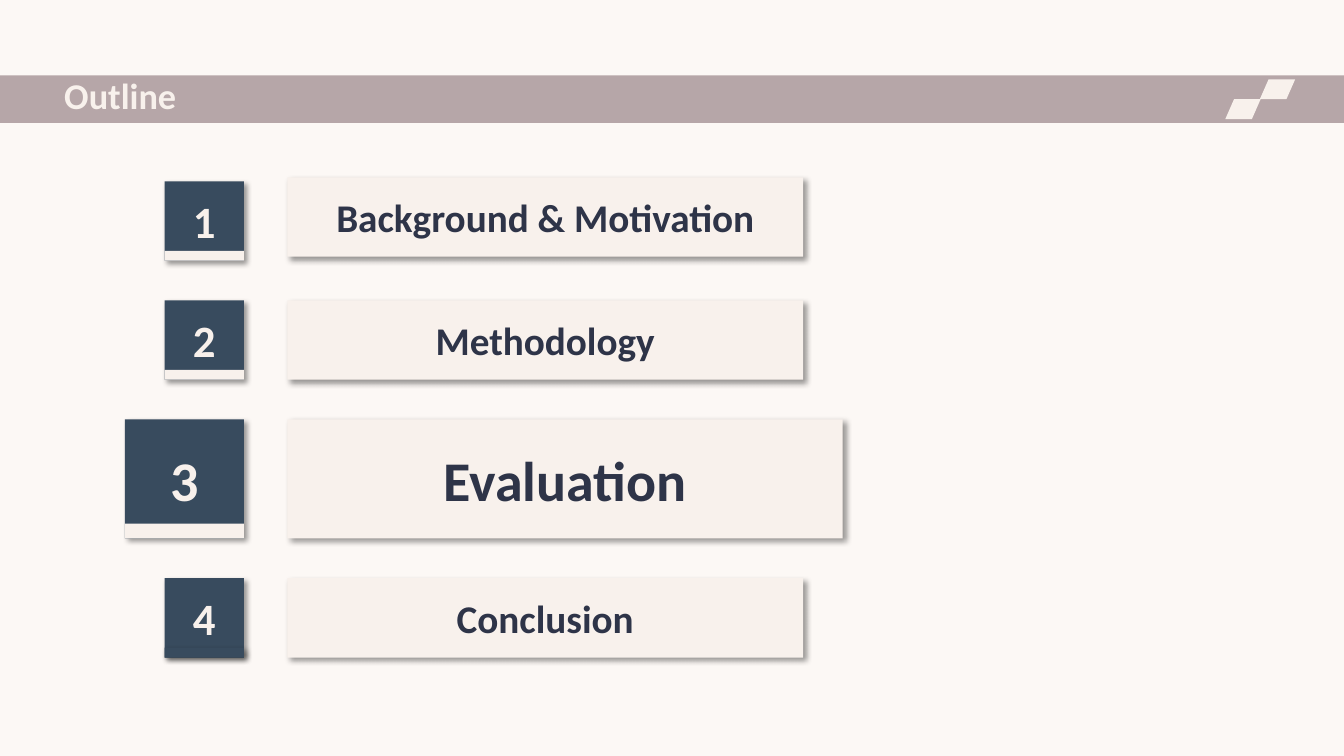
from lxml import etree
from pptx import Presentation
from pptx.dml.color import RGBColor
from pptx.enum.shapes import MSO_SHAPE
from pptx.enum.text import MSO_ANCHOR, PP_ALIGN
from pptx.oxml.ns import qn
from pptx.util import Cm, Pt

RECTANGLE = MSO_SHAPE.RECTANGLE
PARALLELOGRAM = MSO_SHAPE.PARALLELOGRAM
MIDDLE = MSO_ANCHOR.MIDDLE
CENTER, LEFT = PP_ALIGN.CENTER, PP_ALIGN.LEFT

FONT = "Calibri"
COLORS = {
    "background": "FCF8F5",
    "band": "B6A6A8",
    "cream": "F8F1EC",
    "navy": "384B5E",
    "ink": "2E3448",
    "shadow": "000000",
}
SLIDE_WIDTH, SLIDE_HEIGHT = 33.87, 19.05
TILE_RIGHT, LABEL_LEFT = 6.15, 7.24
FIRST_TOP, ROW_GAP = 4.57, 1
# Size, label width, number and label font sizes of a row
NORMAL = (2, 13, 32, 28)
CURRENT = (3, 14, 40, 40)
# Title, row style, label shift, strip colour, whether the strip has a shadow
SECTIONS = [
    ("Background & Motivation", NORMAL, -0.1, "cream", False),
    ("Methodology", NORMAL, 0, "cream", False),
    ("Evaluation", CURRENT, 0, "cream", False),
    ("Conclusion", NORMAL, 0, "navy", True),
]


def color(name):
    return RGBColor.from_string(COLORS[name])


def add_drop_shadow(shape):
    effects = shape._element.spPr.find(qn("a:effectLst"))
    shadow = etree.SubElement(
        effects, qn("a:outerShdw"), blurRad=str(Pt(4)), dist=str(Pt(3)),
        dir="2700000", algn="tl", rotWithShape="0")
    tint = etree.SubElement(shadow, qn("a:srgbClr"), val=COLORS["shadow"])
    etree.SubElement(tint, qn("a:alpha"), val="40000")


def add_block(shapes, box, fill, preset=RECTANGLE, shadow=False):
    """Add a borderless filled shape; box is left, top, width, height in cm."""
    shape = shapes.add_shape(preset, *map(Cm, box))
    shape.fill.solid()
    shape.fill.fore_color.rgb = color(fill)
    shape.line.fill.background()
    shape.shadow.inherit = False
    if shadow:
        add_drop_shadow(shape)
    return shape


def write(shape, text, size, ink, alignment=CENTER):
    frame = shape.text_frame
    frame.word_wrap = True
    frame.vertical_anchor = MIDDLE
    paragraph = frame.paragraphs[0]
    paragraph.text = text
    paragraph.alignment = alignment
    paragraph.font.name = FONT
    paragraph.font.size = Pt(size)
    paragraph.font.bold = True
    paragraph.font.color.rgb = color(ink)
    return paragraph


def add_title_band(slide, box, title):
    left, top, width, height = box
    add_block(slide.shapes, box, "band")
    mark_left, mark_top = left + width - 2.12, top + 0.1
    for column, row in ((0, 0), (-1, 1)):
        mark_box = (mark_left + 0.87 * column, mark_top + 0.5 * row, 0.89, 0.5)
        mark = add_block(slide.shapes, mark_box, "cream", PARALLELOGRAM)
        mark.adjustments[0] = 0.44
    title_box = slide.shapes.add_textbox(
        Cm(left + 1.37), Cm(top), Cm(29.5), Cm(height))
    paragraph = write(title_box, title, 25.9, "cream", LEFT)
    paragraph.line_spacing = 0.8


def add_number_tile(slide, box, number, size, strip_fill, strip_shadow):
    left, top, width, height = box
    shapes = slide.shapes.add_group_shape().shapes
    tile = add_block(shapes, box, "navy", shadow=True)
    write(tile, str(number), size, "cream")
    strip_height = height / 8
    strip_box = (left, top + height - strip_height, width, strip_height)
    add_block(shapes, strip_box, strip_fill, shadow=strip_shadow)


def add_outline(slide, top):
    for number, section in enumerate(SECTIONS, start=1):
        title, style, shift, strip_fill, strip_shadow = section
        height, label_width, number_size, label_size = style
        tile_box = (TILE_RIGHT - height, top, height, height)
        add_number_tile(
            slide, tile_box, number, number_size, strip_fill, strip_shadow)
        label_box = (LABEL_LEFT, top + shift, label_width, height)
        label = add_block(slide.shapes, label_box, "cream", shadow=True)
        write(label, title, label_size, "ink")
        top += height + ROW_GAP


def main():
    presentation = Presentation()
    presentation.slide_width = Cm(SLIDE_WIDTH)
    presentation.slide_height = Cm(SLIDE_HEIGHT)
    slide = presentation.slides.add_slide(presentation.slide_layouts[6])
    slide.background.fill.solid()
    slide.background.fill.fore_color.rgb = color("background")
    add_title_band(slide, (0, 1.9, SLIDE_WIDTH, 1.2), "Outline")
    add_outline(slide, FIRST_TOP)
    presentation.save("out.pptx")


if __name__ == "__main__":
    main()
